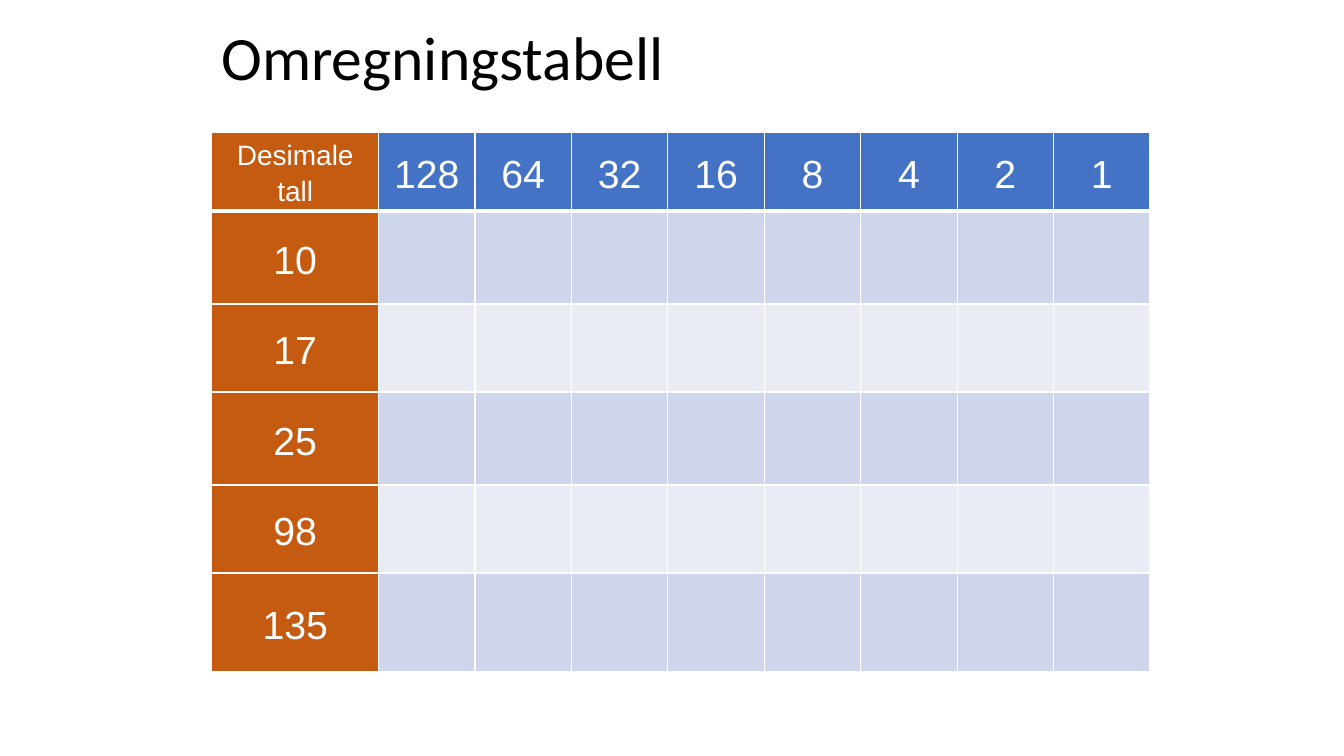
from lxml.etree import SubElement
from pptx import Presentation
from pptx.dml.color import RGBColor
from pptx.enum.text import MSO_ANCHOR, PP_ALIGN
from pptx.oxml.ns import qn
from pptx.util import Cm, Pt

BLACK = RGBColor(0x00, 0x00, 0x00)
WHITE = RGBColor(0xFF, 0xFF, 0xFF)
ORANGE = RGBColor(0xC5, 0x5A, 0x11)
BLUE = RGBColor(0x44, 0x72, 0xC4)
BANDS = (RGBColor(0xE9, 0xEB, 0xF5), RGBColor(0xCF, 0xD5, 0xEA))

CORNER = "Desimale tall"
POWERS = [2 ** exponent for exponent in range(7, -1, -1)]
DECIMALS = [10, 17, 25, 98, 135]
ROW_HEIGHTS = [1.98, 2.34, 2.22, 2.34, 2.22, 2.48]
LABEL_WIDTH, BIT_WIDTH = 4.2, 2.43


def add_title(page, text):
    box = page.shapes.add_textbox(Cm(5.33), Cm(0.33), Cm(22.86), Cm(2.39))
    frame = box.text_frame
    frame.word_wrap = True
    frame.vertical_anchor = MSO_ANCHOR.MIDDLE
    frame.text = text
    para = frame.paragraphs[0]
    para.line_spacing = 0.9
    para.font.name = "Calibri"
    para.font.size = Pt(44)
    para.font.color.rgb = BLACK


def add_borders(cell, bottom_width):
    """Draw white borders; call before filling, since lines precede the fill in XML."""
    properties = cell._tc.get_or_add_tcPr()
    for side, width in (("L", 1), ("R", 1), ("T", 1), ("B", bottom_width)):
        line = SubElement(properties, qn(f"a:ln{side}"), w=str(Pt(width)))
        fill = SubElement(line, qn("a:solidFill"))
        SubElement(fill, qn("a:srgbClr"), val=str(WHITE))


def write_cell(cell, text, size):
    cell.vertical_anchor = MSO_ANCHOR.MIDDLE
    cell.margin_left = cell.margin_right = Cm(0.18)
    cell.margin_top = cell.margin_bottom = 0
    cell.text = text
    para = cell.text_frame.paragraphs[0]
    para.alignment = PP_ALIGN.CENTER
    para.line_spacing = 1.15
    span = para.runs[0]
    span.font.name = "Arial"
    span.font.size = Pt(size)
    span.font.bold = False
    span.font.color.rgb = WHITE


def cell_color(row, column):
    if column == 0:
        return ORANGE
    return BLUE if row == 0 else BANDS[row % 2]


def add_conversion_table(page):
    rows, columns = len(DECIMALS) + 1, len(POWERS) + 1
    width = LABEL_WIDTH + BIT_WIDTH * len(POWERS)
    table = page.shapes.add_table(
        rows, columns, Cm(5.34), Cm(3.34), Cm(width), Cm(sum(ROW_HEIGHTS))
    ).table
    for index, column in enumerate(table.columns):
        column.width = Cm(BIT_WIDTH if index else LABEL_WIDTH)
    for row, height in zip(table.rows, ROW_HEIGHTS):
        row.height = Cm(height)

    for row in range(rows):
        for column in range(columns):
            cell = table.cell(row, column)
            add_borders(cell, 1 if row else 3)
            cell.fill.solid()
            cell.fill.fore_color.rgb = cell_color(row, column)

    write_cell(table.cell(0, 0), CORNER, 20)
    for column, power in enumerate(POWERS, 1):
        write_cell(table.cell(0, column), str(power), 28)
    for row, decimal in enumerate(DECIMALS, 1):
        write_cell(table.cell(row, 0), str(decimal), 28)


def main():
    deck = Presentation()
    deck.slide_width, deck.slide_height = Cm(33.87), Cm(19.05)
    page = deck.slides.add_slide(deck.slide_layouts[6])
    add_title(page, "Omregningstabell")
    add_conversion_table(page)
    deck.save("out.pptx")


if __name__ == "__main__":
    main()
